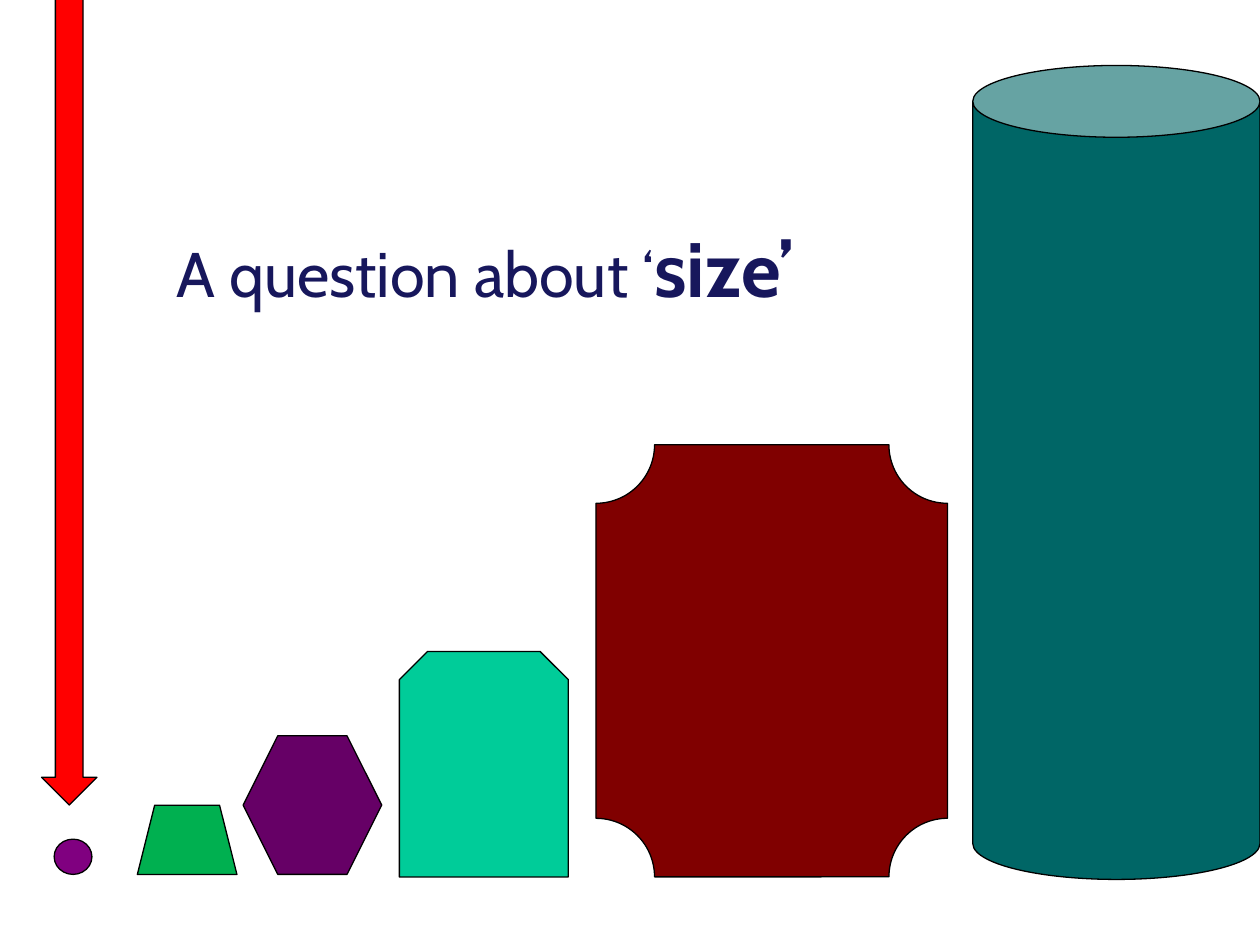
from pptx import Presentation
from pptx import util as u
from pptx.dml.color import RGBColor
from pptx.enum import shapes, text

COLUMNS, ROWS = 100, 75
CELL = u.Inches(0.1)
KIND = shapes.MSO_SHAPE
COLOURS = {
    "title": "17175C", "outline": "000000", "dot": "800080",
    "trapezoid": "00B050", "hexagon": "660066", "plaque": "800000",
    "can": "006666", "door": "00CC99", "arrow": "FF0000",
}

# kind, colour, left, top, width, height in grid cells
SIZE_ROW = [
    (KIND.OVAL, "dot", 4.3, 66.6, 3, 2.8),
    (KIND.TRAPEZOID, "trapezoid", 10.9, 63.9, 7.9, 5.5),
    (KIND.HEXAGON, "hexagon", 19.3, 58.4, 11, 11),
    (KIND.PLAQUE, "plaque", 47.3, 35.3, 27.9, 34.3),
    (KIND.CAN, "can", 77.2, 5.2, 22.8, 64.6),
    (KIND.SNIP_2_SAME_RECTANGLE, "door", 31.7, 51.7, 13.4, 17.9),
]


def colour(name):
    return RGBColor.from_string(COLOURS[name])


def cells(*lengths):
    return [round(length * CELL) for length in lengths]


def add_figure(parent, kind, fill, *place):
    figure = parent.add_shape(kind, *cells(*place))
    figure.shadow.inherit = False
    figure.fill.solid()
    figure.fill.fore_color.rgb = colour(fill)
    figure.line.color.rgb = colour("outline")
    figure.line.width = u.Pt(0.75)


def add_title(page, spans, *place):
    """Write spans of (wording, size, bold) on one line."""
    frame = page.shapes.add_textbox(*cells(*place)).text_frame
    frame.word_wrap = True
    frame.auto_size = text.MSO_AUTO_SIZE.SHAPE_TO_FIT_TEXT
    para = frame.paragraphs[0]
    for wording, size, bold in spans:
        span = para.add_run()
        span.text = wording
        span.font.name = "Cabin"
        span.font.size = u.Pt(size)
        span.font.bold = bold
        span.font.color.rgb = colour("title")


def main():
    deck = Presentation()
    deck.slide_width, deck.slide_height = cells(COLUMNS, ROWS)
    page = deck.slides.add_slide(deck.slide_layouts[6])
    add_title(page, [("A question about ‘", 36, False), ("size’", 44, True)],
              13, 17, 56.7, 8.4)
    size_group = page.shapes.add_group_shape()
    for figure in SIZE_ROW:
        add_figure(size_group.shapes, *figure)
    add_figure(page.shapes, KIND.DOWN_ARROW, "arrow", 3.3, -0.7, 4.4, 64.6)
    deck.save("out.pptx")


if __name__ == "__main__":
    main()
